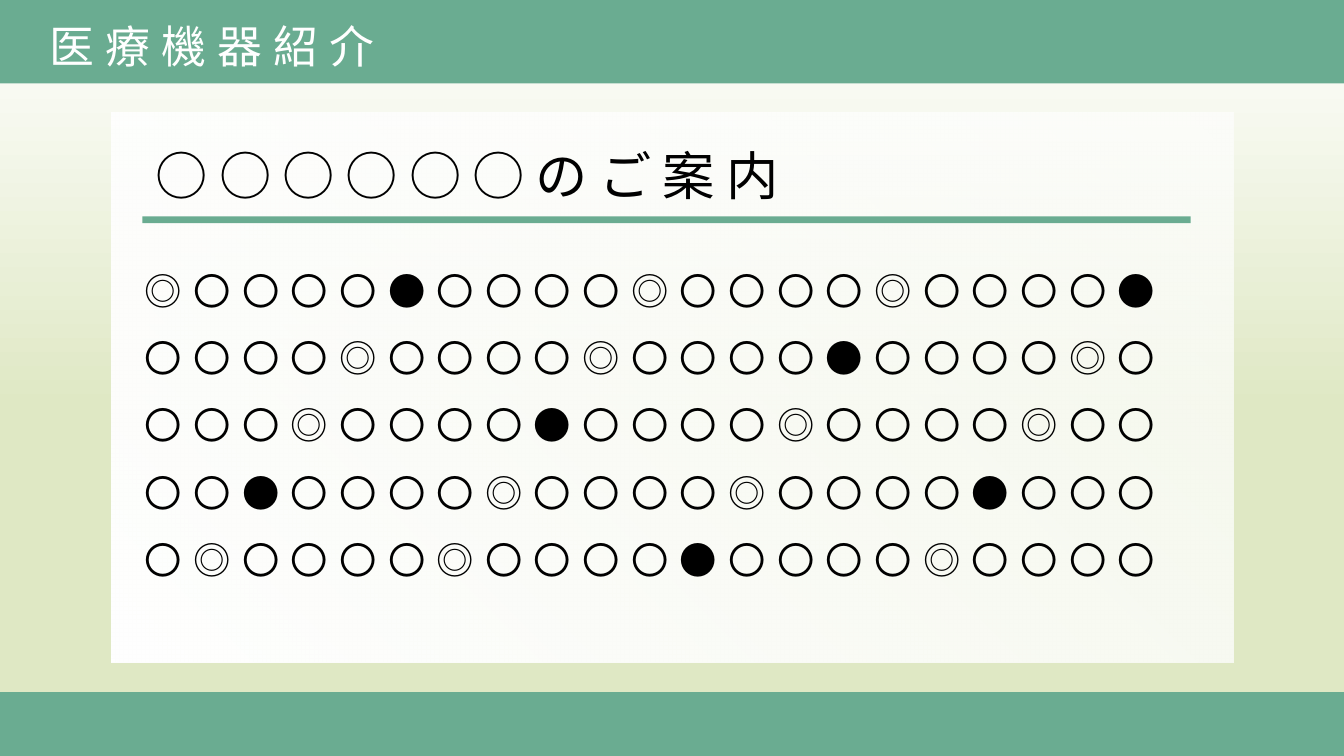
"""Build the medical equipment introduction slide."""
from lxml.etree import SubElement
from pptx import Presentation
from pptx.dml.color import RGBColor as RGB
from pptx.enum.shapes import MSO_SHAPE as SHAPE
from pptx.enum.text import MSO_AUTO_SIZE as AUTO
from pptx.oxml.ns import qn
from pptx.util import Inches, Pt

COLORS = {"green": "6AAC91", "pale": "DFE8C4", "white": "FFFFFF", "black": "000000"}
FONT = "Noto Sans CJK JP"
WIDTH = 10
HEIGHT = WIDTH * 9 / 16
CARD = (0.83, 0.84, 8.35, 4.09)
BANDS = [
    (0, 5.15, WIDTH, HEIGHT - 5.15),
    (0, 0, WIDTH, 0.62),
    (1.06, 1.61, 7.8, 0.05),
]
TEXTS = [
    ("◎〇〇〇〇●〇〇〇〇◎〇〇〇〇" * 7, (0.98, 1.78, 7.91, 2.63), 20, "black", 1.5),
    ("○○○○○○のご案内", (1.06, 1.02, 8.19, 0.57), 28, "black", None),
    ("医療機器紹介", (0.27, 0.09, 8.12, 0.5), 24, "white", None),
]


def color(name):
    return RGB.from_string(COLORS[name])


def add_rect(slide, box):
    rect = slide.shapes.add_shape(SHAPE.RECTANGLE, *map(Inches, box))
    rect.shadow.inherit = False
    rect.line.fill.background()
    return rect


def set_gradient(fill, stops):
    fill.gradient()
    fill.gradient_angle = 270
    for stop, (position, name) in zip(fill.gradient_stops, stops):
        stop.position = position
        stop.color.rgb = color(name)


def add_card(slide):
    card = add_rect(slide, CARD)
    set_gradient(card.fill, [(0, "white"), (1, "white")])
    gradient = card._element.spPr.find(qn("a:gradFill"))
    far_color = gradient.findall(".//" + qn("a:srgbClr"))[-1]
    SubElement(far_color, qn("a:alpha"), val="66000")
    gradient.remove(gradient.find(qn("a:lin")))
    circle = SubElement(gradient, qn("a:path"), path="circle")
    SubElement(circle, qn("a:fillToRect"), t="100000", r="100000")


def add_text(slide, text, box, size, color_name, line_spacing):
    frame = slide.shapes.add_textbox(*map(Inches, box)).text_frame
    frame.word_wrap = True
    frame.auto_size = AUTO.SHAPE_TO_FIT_TEXT
    paragraph = frame.paragraphs[0]
    paragraph.text = text
    paragraph.line_spacing = line_spacing
    font = paragraph.font
    font.size, font.name = Pt(size), FONT
    font.color.rgb = color(color_name)
    properties = paragraph._p.pPr.find(qn("a:defRPr"))
    properties.set("spc", "600")
    SubElement(properties, qn("a:ea"), typeface=FONT)


def main():
    deck = Presentation()
    deck.slide_width, deck.slide_height = Inches(WIDTH), Inches(HEIGHT)
    slide = deck.slides.add_slide(deck.slide_layouts[6])
    set_gradient(slide.background.fill, [(0, "white"), (0.54, "pale")])
    add_card(slide)
    for box in BANDS:
        band = add_rect(slide, box)
        band.fill.solid()
        band.fill.fore_color.rgb = color("green")
    for entry in TEXTS:
        add_text(slide, *entry)
    deck.save("out.pptx")


if __name__ == "__main__":
    main()
